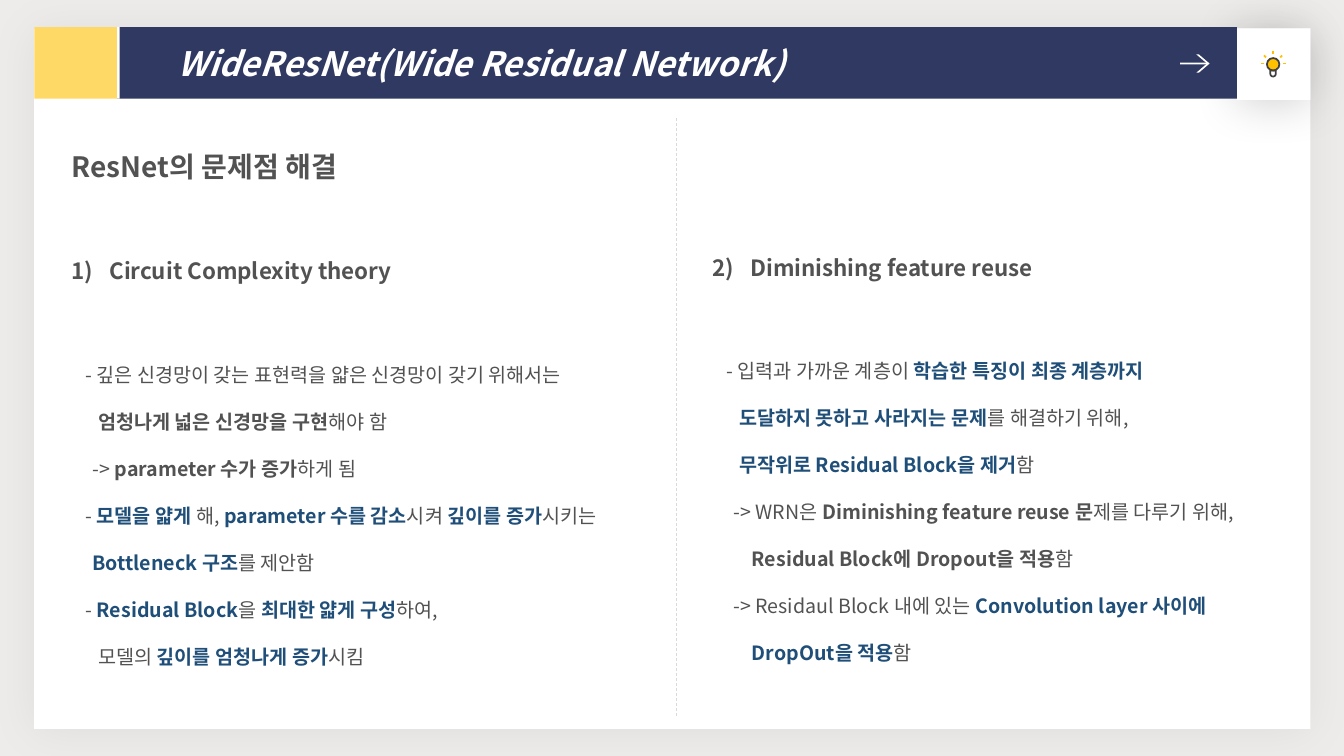
from dataclasses import dataclass
from lxml import etree
from pptx import Presentation
from pptx.dml.color import RGBColor
from pptx.enum.dml import MSO_LINE
from pptx.enum.shapes import MSO_CONNECTOR, MSO_SHAPE
from pptx.enum.text import MSO_ANCHOR, MSO_AUTO_SIZE, PP_ALIGN
from pptx.oxml.ns import qn
from pptx.util import Pt

RECTANGLE, OVAL, CHEVRON = MSO_SHAPE.RECTANGLE, MSO_SHAPE.OVAL, MSO_SHAPE.CHEVRON
BULB_BASE = MSO_SHAPE.ROUND_2_SAME_RECTANGLE
STRAIGHT, DASH = MSO_CONNECTOR.STRAIGHT, MSO_LINE.DASH
LEFT, TOP, MIDDLE = PP_ALIGN.LEFT, MSO_ANCHOR.TOP, MSO_ANCHOR.MIDDLE
NO_AUTOFIT = MSO_AUTO_SIZE.NONE


@dataclass(frozen=True)
class Theme:
    font: str = "Noto Sans CJK KR"
    background: str = "EDECEA"
    white: str = "FFFFFF"
    black: str = "000000"
    navy: str = "303962"
    yellow: str = "FFD966"
    amber: str = "FFC000"
    outline: str = "404040"
    divider: str = "D9D9D9"
    text: str = "525252"
    accent: str = "1F4E79"
    title_size: int = 24
    heading_size: int = 20
    item_size: int = 16
    body_size: int = 14


theme = Theme()


def add_box(kind, bounds, fill=None, outline=None, shadow=None, adjustments=()):
    """Add a preset shape; shadow is (colour, opacity %, blur, distance, degrees)."""
    shape = slide.shapes.add_shape(kind, *[Pt(value) for value in bounds])
    for index, value in enumerate(adjustments):
        shape.adjustments[index] = value
    if fill:
        shape.fill.solid()
        shape.fill.fore_color.rgb = RGBColor.from_string(fill)
    else:
        shape.fill.background()
    if outline:
        shape.line.color.rgb = RGBColor.from_string(outline)
        shape.line.width = Pt(1.25)
    else:
        shape.line.fill.background()
    shape.shadow.inherit = False
    if shadow:
        colour, opacity, blur, distance, degrees = shadow
        effects = shape._element.spPr.find(qn("a:effectLst"))
        outer = etree.SubElement(effects, qn("a:outerShdw"), blurRad=str(Pt(blur)),
                                 dist=str(Pt(distance)), dir=str(degrees * 60000),
                                 algn="ctr", rotWithShape="0")
        tint = etree.SubElement(outer, qn("a:srgbClr"), val=colour)
        etree.SubElement(tint, qn("a:alpha"), val=str(opacity * 1000))


def write(paragraph, runs, size, colour=theme.text, italic=False, indent=0,
          spacing=1, before=0, number=None):
    """Fill a paragraph with (text, style) runs: plain, strong or accent."""
    paragraph.alignment = LEFT
    paragraph.line_spacing = spacing
    paragraph.space_before, paragraph.space_after = Pt(before), Pt(0)
    properties = paragraph._p.get_or_add_pPr()
    properties.set("marL", str(Pt(indent)))
    properties.set("indent", str(Pt(-indent if number else 0)))
    if number:
        etree.SubElement(properties, qn("a:buFont"), typeface="+mj-lt")
        etree.SubElement(properties, qn("a:buAutoNum"), type="arabicParenR",
                         startAt=str(number))
    else:
        etree.SubElement(properties, qn("a:buNone"))
    for text, style in runs:
        run = paragraph.add_run()
        run.text = text
        font = run.font
        font.name, font.size = theme.font, Pt(size)
        font.bold, font.italic = style != "plain", italic
        font.color.rgb = RGBColor.from_string(theme.accent if style == "accent" else colour)
        etree.SubElement(run._r.rPr, qn("a:ea"), typeface=theme.font)


presentation = Presentation()
presentation.slide_width, presentation.slide_height = Pt(960), Pt(540)
slide = presentation.slides.add_slide(presentation.slide_layouts[3])
slide.background.fill.solid()
slide.background.fill.fore_color.rgb = RGBColor.from_string(theme.background)
title, left_body, right_body = slide.placeholders

# White page and icon card
add_box(RECTANGLE, (24.5, 20.2, 911.5, 500.4), theme.white, shadow=(theme.black, 5, 34, 2, 90))
add_box(RECTANGLE, (883.4, 20.2, 52.6, 51.1), theme.white, shadow=(theme.black, 18, 34, 2, 90))

# Title bar, raised above the page
slide.shapes._spTree.append(title._element)
title.left, title.top, title.width, title.height = Pt(83.5), Pt(19.4), Pt(800), Pt(51.1)
title.fill.solid()
title.fill.fore_color.rgb = RGBColor.from_string(theme.navy)
title.text_frame.vertical_anchor = MIDDLE
title.text_frame.auto_size = NO_AUTOFIT
write(title.text_frame.paragraphs[0], [("WideResNet(Wide Residual Network)", "strong")],
      theme.title_size, colour=theme.white, italic=True, indent=36)
add_box(RECTANGLE, (24.5, 19.4, 59, 51.1), theme.yellow, shadow=(theme.white, 100, 0, 2, 0))

# Arrow in the title bar
add_box(CHEVRON, (854.6, 38.9, 9.4, 13), theme.white, adjustments=[0.807])
add_box(RECTANGLE, (843, 44.7, 20.2, 1.3), theme.white)

# Light bulb
add_box(OVAL, (905, 41.5, 8.9, 8.9), theme.amber, theme.outline)
add_box(BULB_BASE, (907.4, 50.4, 3.9, 4.3), outline=theme.outline, adjustments=[0, 0.5])

# Bulb rays and column divider
ray = (theme.amber, 1.25, None)
lines = [
    ((909.4, 36.7, 909.4, 38.9), ray),
    ((918.7, 45.4, 916.6, 45.4), ray),
    ((902.9, 45.4, 900.7, 45.4), ray),
    ((904.3, 41, 902.9, 39.6), ray),
    ((914.4, 41, 915.8, 39.6), ray),
    ((483.1, 84.2, 483.1, 511.9), (theme.divider, 0.5, DASH)),
]
for points, (colour, width, dash) in lines:
    connector = slide.shapes.add_connector(STRAIGHT, *[Pt(value) for value in points])
    connector.line.color.rgb = RGBColor.from_string(colour)
    connector.line.width = Pt(width)
    if dash:
        connector.line.dash_style = dash
    etree.SubElement(connector._element.spPr, qn("a:effectLst"))

# Text columns: each line is (indent, runs)
DASHED, ARROWED, CONTINUED, NESTED = 10, 15, 19, 28
left_lines = [
    (DASHED, [("- 깊은 신경망이 갖는 표현력을 얇은 신경망이 갖기 위해서는", "plain")]),
    (CONTINUED, [("엄청나게 넓은 신경망을 구현", "strong"), ("해야 함", "plain")]),
    (ARROWED, [("-> ", "plain"), ("parameter 수가 증가", "strong"), ("하게 됨", "plain")]),
    (DASHED, [("- ", "plain"), ("모델을 얇게 ", "accent"), ("해, ", "plain"),
              ("parameter 수를 감소", "accent"), ("시켜 ", "plain"),
              ("깊이를 증가", "accent"), ("시키는", "plain")]),
    (ARROWED, [("Bottleneck 구조", "accent"), ("를 제안함", "plain")]),
    (DASHED, [("- ", "plain"), ("Residual Block", "accent"), ("을 ", "plain"),
              ("최대한 얇게 구성", "accent"), ("하여,", "plain")]),
    (CONTINUED, [("모델의 ", "plain"), ("깊이를 엄청나게 증가", "accent"), ("시킴", "plain")]),
]
right_lines = [
    (DASHED, [("- 입력과 가까운 계층이 ", "plain"), ("학습한 특징이 최종 계층까지", "accent")]),
    (CONTINUED, [("도달하지 못하고 사라지는 문제", "accent"), ("를 해결하기 위해,", "plain")]),
    (CONTINUED, [("무작위로 Residual Block을 제거", "accent"), ("함", "plain")]),
    (ARROWED, [("-> WRN은 ", "plain"), ("Diminishing feature reuse 문", "strong"),
               ("제를 다루기 위해,", "plain")]),
    (NESTED, [("Residual Block에 Dropout을 적용", "strong"), ("함", "plain")]),
    (ARROWED, [("-> Residaul Block 내에 있는 ", "plain"),
               ("Convolution layer 사이에", "accent")]),
    (NESTED, [("DropOut을 적용", "accent"), ("함", "plain")]),
]
columns = [
    (left_body, (43.9, 79.2, 435.6, 399.6), "ResNet의 문제점 해결",
     "Circuit Complexity theory", left_lines),
    (right_body, (501.8, 158.4, 422.6, 316.8), None,
     "Diminishing feature reuse", right_lines),
]
for number, (body, bounds, heading, item, body_lines) in enumerate(columns, start=1):
    slide.shapes._spTree.append(body._element)
    body.left, body.top, body.width, body.height = [Pt(value) for value in bounds]
    frame = body.text_frame
    frame.word_wrap, frame.auto_size, frame.vertical_anchor = True, NO_AUTOFIT, TOP
    paragraph = frame.paragraphs[0]
    if heading:
        write(paragraph, [(heading, "strong")], theme.heading_size, spacing=2)
        paragraph = frame.add_paragraph()
    write(paragraph, [(item, "strong")], theme.item_size, indent=27, spacing=2,
          before=34 if heading else 0, number=number)
    for index, (indent, runs) in enumerate(body_lines):
        write(frame.add_paragraph(), runs, theme.body_size, indent=indent, spacing=2,
              before=0 if index else 39)

presentation.save("out.pptx")
